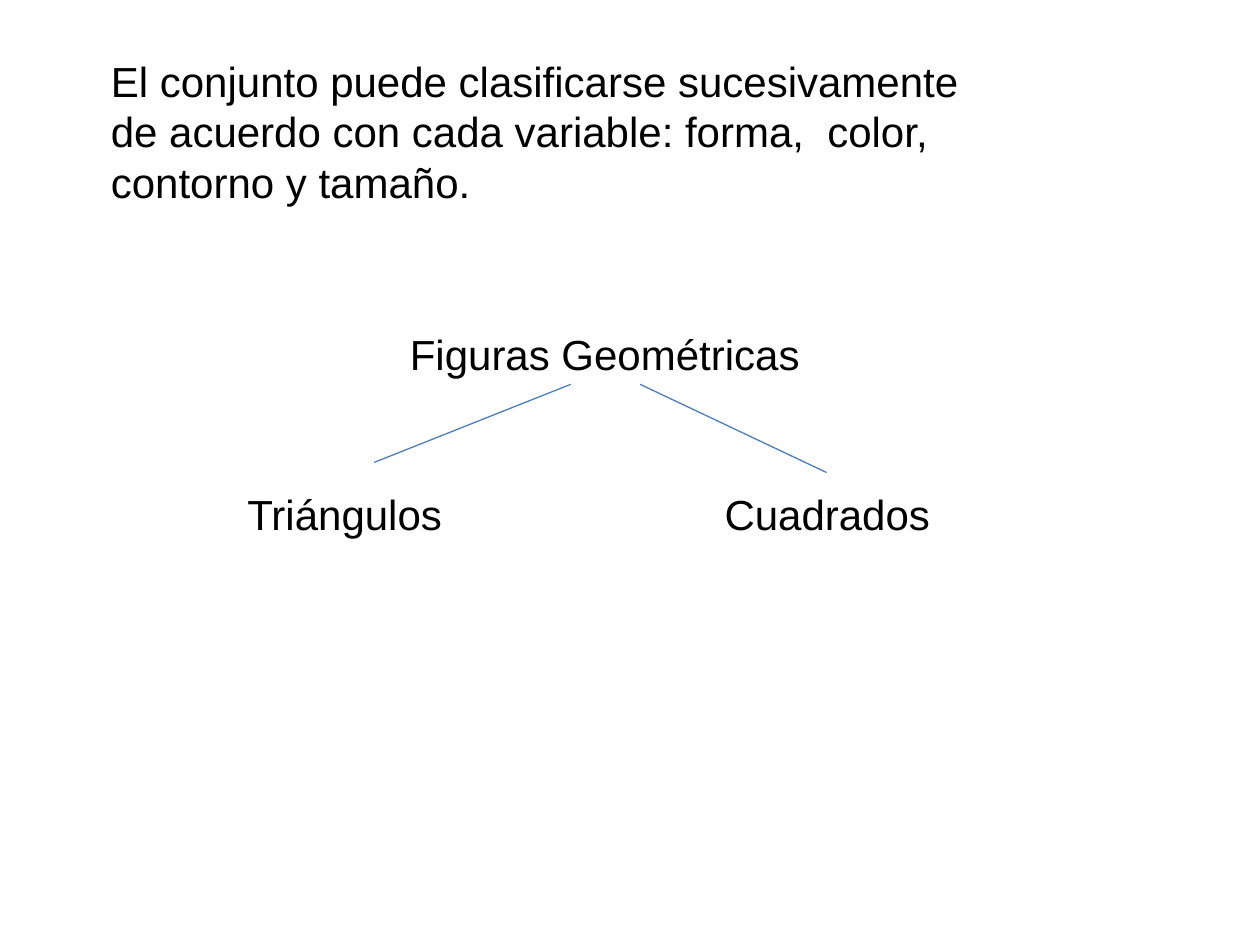
from dataclasses import dataclass

from lxml import etree
from pptx import Presentation
from pptx.dml.color import RGBColor
from pptx.enum import shapes, text
from pptx.oxml.ns import qn
from pptx.util import Inches, Pt

COLORS = {"text": "000000", "branch": "4B7EBC"}
FONT = "Arial"
TEXT_SIZE = 24


@dataclass
class Label:
    wording: str
    left: float
    top: float
    width: float
    height: float = 0.5


@dataclass
class Branch:
    start: tuple[float, float]
    end: tuple[float, float]


TITLE = Label(
    "El conjunto puede clasificarse sucesivamente de acuerdo con cada variable: "
    "forma,  color,  contorno y tamaño.",
    0.78, 0.39, 7.19, 1.31,
)
LABELS = [
    Label("Figuras Geométricas", 3.12, 2.56, 3.36),
    Label("Triángulos", 1.64, 3.83, 2.19),
    Label("Cuadrados", 5.47, 3.83, 2.19),
]
BRANCHES = [
    Branch((4.53, 3.05), (2.97, 3.67)),
    Branch((5.08, 3.05), (6.56, 3.75)),
]


def write_text(box, label: Label, alignment) -> None:
    """Fill a text shape with one formatted paragraph."""
    frame = box.text_frame
    frame.text = label.wording
    frame.word_wrap = True
    frame.auto_size = text.MSO_AUTO_SIZE.NONE
    frame.vertical_anchor = text.MSO_ANCHOR.TOP
    para = frame.paragraphs[0]
    para.alignment = alignment
    for span in para.runs:
        span.font.name = FONT
        span.font.size = Pt(TEXT_SIZE)
        span.font.color.rgb = RGBColor.from_string(COLORS["text"])


def place_title(page, label: Label) -> None:
    box = page.shapes.title
    box.left, box.top = Inches(label.left), Inches(label.top)
    box.width, box.height = Inches(label.width), Inches(label.height)
    write_text(box, label, text.PP_ALIGN.LEFT)


def add_label(page, label: Label) -> None:
    box = page.shapes.add_textbox(
        Inches(label.left), Inches(label.top),
        Inches(label.width), Inches(label.height),
    )
    write_text(box, label, text.PP_ALIGN.CENTER)


def add_branch(page, branch: Branch) -> None:
    points = [Inches(value) for value in (*branch.start, *branch.end)]
    connector = page.shapes.add_connector(shapes.MSO_CONNECTOR.STRAIGHT, *points)
    connector.line.color.rgb = RGBColor.from_string(COLORS["branch"])
    connector.line.width = Pt(0.75)
    # An empty effect list removes the theme shadow
    properties = connector.element.find(qn("p:spPr"))
    etree.SubElement(properties, qn("a:effectLst"))


def main() -> None:
    deck = Presentation()
    deck.slide_width, deck.slide_height = Inches(10), Inches(7.5)
    page = deck.slides.add_slide(deck.slide_layouts.get_by_name("Title Only"))

    # Statement at the top
    place_title(page, TITLE)

    # Classification tree
    for branch in BRANCHES:
        add_branch(page, branch)
    for label in LABELS:
        add_label(page, label)

    deck.save("out.pptx")


if __name__ == "__main__":
    main()
